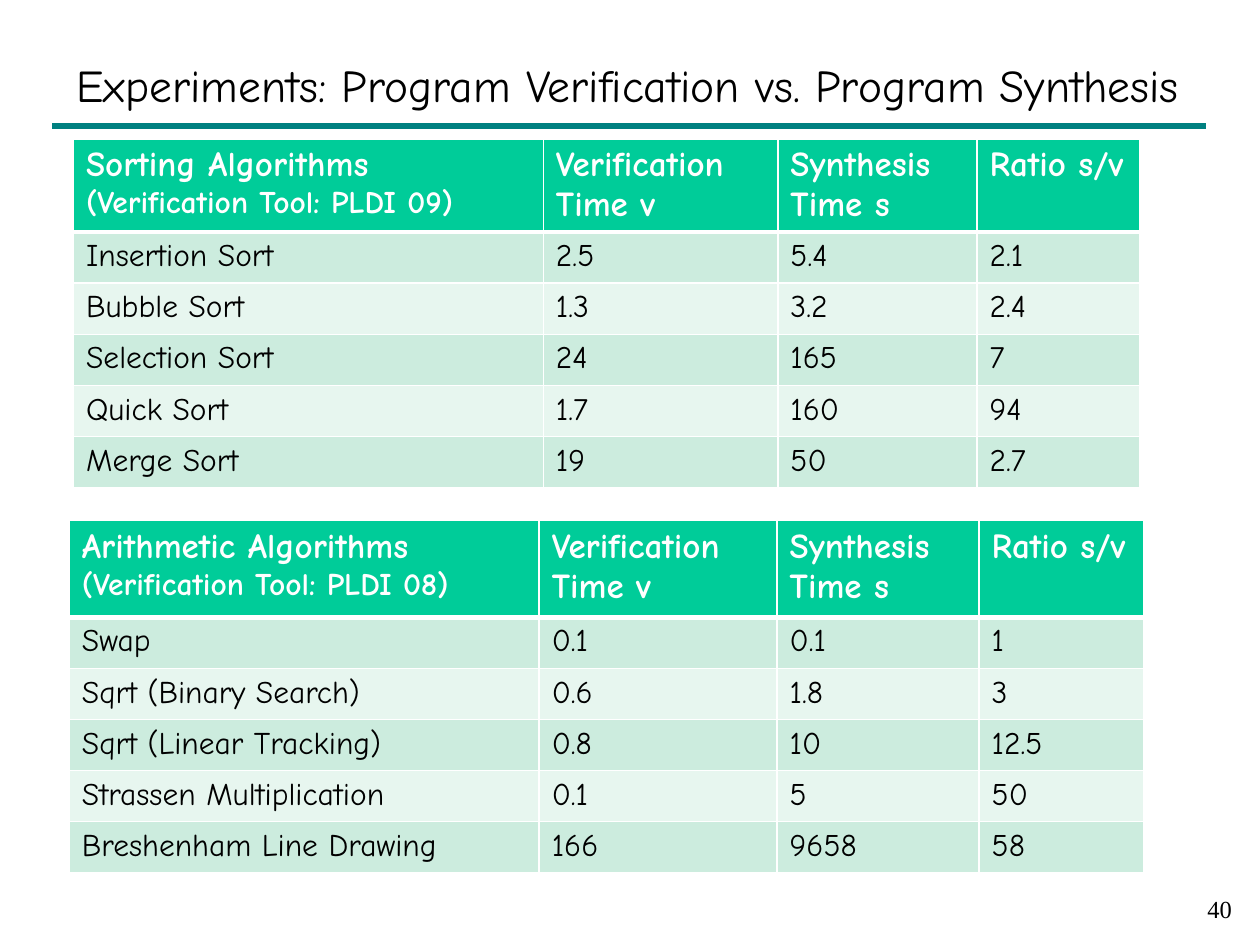
from lxml.etree import SubElement
from pptx import Presentation
from pptx.dml.color import RGBColor
from pptx.enum.shapes import MSO_CONNECTOR
from pptx.enum.text import MSO_ANCHOR, PP_ALIGN
from pptx.oxml.ns import qn
from pptx.util import Pt

BLACK = RGBColor(0x00, 0x00, 0x00)
WHITE = RGBColor(0xFF, 0xFF, 0xFF)
TEAL = RGBColor(0x00, 0x80, 0x80)
GREEN = RGBColor(0x00, 0xCC, 0x99)
BAND_COLORS = (RGBColor(0xCC, 0xEC, 0xDE), RGBColor(0xE7, 0xF6, 0xEF))

TIME_HEADERS = ["Verification\nTime v", "Synthesis\nTime s", "Ratio s/v"]
SORTING_ROWS = [
    ["Sorting Algorithms\n(Verification Tool: PLDI 09)", *TIME_HEADERS],
    ["Insertion Sort", "2.5", "5.4", "2.1"],
    ["Bubble Sort", "1.3", "3.2", "2.4"],
    ["Selection Sort", "24", "165", "7"],
    ["Quick Sort", "1.7", "160", "94"],
    ["Merge Sort", "19", "50", "2.7"],
]
ARITHMETIC_ROWS = [
    ["Arithmetic Algorithms\n(Verification Tool: PLDI 08)", *TIME_HEADERS],
    ["Swap", "0.1", "0.1", "1"],
    ["Sqrt (Binary Search)", "0.6", "1.8", "3"],
    ["Sqrt (Linear Tracking)", "0.8", "10", "12.5"],
    ["Strassen Multiplication", "0.1", "5", "50"],
    ["Breshenham Line Drawing", "166", "9658", "58"],
]


class SlideBuilder:
    """Holds the style and the current slide and adds elements in points."""

    body_font = "Comic Neue"
    number_font = "Times New Roman"
    header_height = 52.6
    row_height = 29.2

    def __init__(self, presentation):
        self.slide = presentation.slides.add_slide(presentation.slide_layouts[5])

    def style(self, paragraph, size, color=BLACK, bold=False, name=body_font):
        font = paragraph.font
        font.name, font.size, font.bold = name, Pt(size), bold
        font.color.rgb = color

    def title(self, text, left, top, width, height):
        shape = self.slide.shapes.title
        shape.left, shape.top = Pt(left), Pt(top)
        shape.width, shape.height = Pt(width), Pt(height)
        frame = shape.text_frame
        frame.text = text
        frame.vertical_anchor = MSO_ANCHOR.MIDDLE
        frame.paragraphs[0].alignment = PP_ALIGN.CENTER
        self.style(frame.paragraphs[0], 26)

    def rule(self, left, right, top):
        line = self.slide.shapes.add_connector(
            MSO_CONNECTOR.STRAIGHT, Pt(left), Pt(top), Pt(right), Pt(top))
        line.line.color.rgb = TEAL
        line.line.width = Pt(4)
        SubElement(line._element.spPr, qn("a:effectLst"))

    def page_number(self, text, left, top, width, height):
        box = self.slide.shapes.add_textbox(Pt(left), Pt(top), Pt(width), Pt(height))
        box.text_frame.word_wrap = True
        box.text_frame.text = text
        paragraph = box.text_frame.paragraphs[0]
        paragraph.alignment = PP_ALIGN.RIGHT
        self.style(paragraph, 14, name=self.number_font)

    def borders(self, cell, widths):
        properties = cell._tc.get_or_add_tcPr()
        for position, (side, width) in enumerate(widths.items()):
            line = properties.makeelement(qn(f"a:{side}"), {"w": str(Pt(width))})
            fill = SubElement(line, qn("a:solidFill"))
            SubElement(fill, qn("a:srgbClr"), val=str(WHITE))
            properties.insert(position, line)

    def table(self, rows, left, top, column_widths):
        heights = [self.header_height] + [self.row_height] * (len(rows) - 1)
        table = self.slide.shapes.add_table(
            len(rows), len(column_widths), Pt(left), Pt(top),
            Pt(sum(column_widths)), Pt(sum(heights))).table
        for column, width in zip(table.columns, column_widths):
            column.width = Pt(width)
        for row, height in zip(table.rows, heights):
            row.height = Pt(height)
        for row_index, row in enumerate(rows):
            for column_index, text in enumerate(row):
                self.cell(table.cell(row_index, column_index), text, row_index)

    def cell(self, cell, text, row_index):
        header = row_index == 0
        cell.fill.solid()
        cell.fill.fore_color.rgb = GREEN if header else BAND_COLORS[(row_index - 1) % 2]
        self.borders(cell, {"lnL": 1, "lnR": 1, "lnT": 3 if row_index == 1 else 1,
                            "lnB": 3 if header else 1})
        cell.text_frame.text = text
        for paragraph in cell.text_frame.paragraphs:
            large = header and not paragraph.text.startswith("(")
            self.style(paragraph, 20 if large else 18, WHITE if header else BLACK, header)


def main():
    presentation = Presentation()
    presentation.slide_width, presentation.slide_height = Pt(720), Pt(540)
    builder = SlideBuilder(presentation)
    builder.rule(30, 689, 72)
    builder.title("Experiments: Program Verification vs. Program Synthesis", 3.6, 24, 711, 48)
    builder.table(SORTING_ROWS, 42, 79.3, [268.5, 134, 113.8, 92.8])
    builder.page_number("40", 561, 507.6, 150, 30)
    builder.table(ARITHMETIC_ROWS, 39.6, 297.5, [268.5, 136, 115.4, 94.3])
    presentation.save("out.pptx")


if __name__ == "__main__":
    main()
